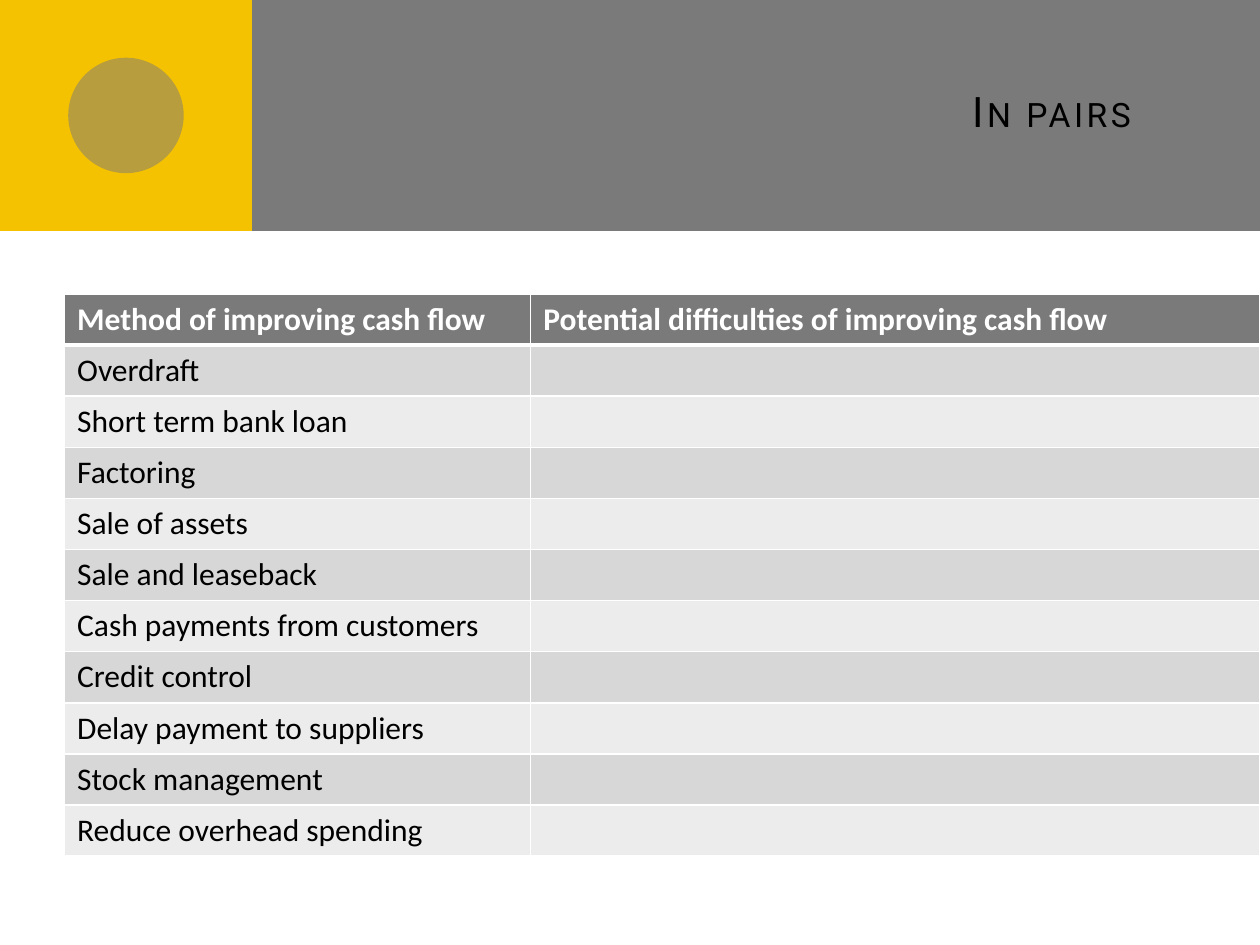
import pptx
import pptx.dml.color
import pptx.enum.shapes
import pptx.enum.text
import pptx.oxml
import pptx.oxml.ns
import pptx.util
from lxml import etree

Pt = pptx.util.Pt
SHAPES = pptx.enum.shapes.MSO_SHAPE
ALIGN = pptx.enum.text.PP_ALIGN
ANCHOR = pptx.enum.text.MSO_ANCHOR

METHODS = [
    "Overdraft", "Short term bank loan", "Factoring", "Sale of assets",
    "Sale and leaseback", "Cash payments from customers", "Credit control",
    "Delay payment to suppliers", "Stock management", "Reduce overhead spending",
]


def color(hex_string):
    return pptx.dml.color.RGBColor.from_string(hex_string)


def add_child(parent, tag, **attributes):
    return etree.SubElement(parent, pptx.oxml.ns.qn(tag), **attributes)


def write_text(frame, text, font="Calibri", size=18, ink="000000", bold=False,
               align=ALIGN.LEFT, spacing=0, small_caps=False):
    paragraph = frame.paragraphs[0]
    paragraph.alignment = align
    run = paragraph.add_run()
    run.text = text
    run.font.name = font
    run.font.size = Pt(size)
    run.font.bold = bold
    run.font.color.rgb = color(ink)
    properties = run.font._element
    if spacing:
        properties.set("spc", str(spacing * 100))
    if small_caps:
        properties.set("cap", "small")


class SlideBuilder:
    gray, yellow, white = "7A7A7A", "F5C201", "FFFFFF"
    bands = ("D7D7D7", "ECECEC")

    def __init__(self, slide):
        self.slide = slide

    def shape(self, kind, left, top, width, height, fill, opacity=100):
        shape = self.slide.shapes.add_shape(
            kind, Pt(left), Pt(top), Pt(width), Pt(height))
        shape.shadow.inherit = False
        shape.fill.solid()
        shape.fill.fore_color.rgb = color(fill)
        shape.line.fill.background()
        if opacity < 100:
            solid = shape._element.spPr.find(pptx.oxml.ns.qn("a:solidFill"))
            add_child(solid[0], "a:alpha", val=str(opacity * 1000))

    def title(self, text, left, top, width, height):
        frame = self.slide.shapes.add_textbox(
            Pt(left), Pt(top), Pt(width), Pt(height)).text_frame
        frame.word_wrap = True
        frame.vertical_anchor = ANCHOR.MIDDLE
        frame.margin_right = Pt(21.6)
        write_text(frame, text, font="Roboto", size=24, align=ALIGN.RIGHT,
                   spacing=2, small_caps=True)

    def cell(self, cell, text, fill, top_border=1, bottom_border=1, **text_format):
        if text:
            write_text(cell.text_frame, text, **text_format)
        properties = cell._tc.get_or_add_tcPr()
        borders = {"a:lnL": 1, "a:lnR": 1, "a:lnT": top_border, "a:lnB": bottom_border}
        for tag, width in borders.items():
            line = add_child(properties, tag, w=str(Pt(width)))
            add_child(add_child(line, "a:solidFill"), "a:srgbClr", val=self.white)
        cell.fill.solid()
        cell.fill.fore_color.rgb = color(fill)

    def table(self, rows, left, top, column_widths, row_height):
        table = self.slide.shapes.add_table(
            len(rows), len(column_widths), Pt(left), Pt(top),
            Pt(sum(column_widths)), Pt(row_height * len(rows))).table
        for column, width in zip(table.columns, column_widths):
            column.width = Pt(width)
        for row_index, texts in enumerate(rows):
            table.rows[row_index].height = Pt(row_height)
            for column_index, text in enumerate(texts):
                cell = table.cell(row_index, column_index)
                if row_index == 0:
                    self.cell(cell, text, self.gray, bottom_border=3,
                              ink=self.white, bold=True)
                else:
                    self.cell(cell, text, self.bands[(row_index - 1) % 2],
                              top_border=3 if row_index == 1 else 1)


def main():
    presentation = pptx.Presentation()
    presentation.slide_width = Pt(720)
    presentation.slide_height = Pt(540)
    builder = SlideBuilder(presentation.slides.add_slide(presentation.slide_layouts[6]))

    # Header band with its accent block and circle
    builder.shape(SHAPES.RECTANGLE, 0, 0, 720, 132, builder.gray)
    builder.shape(SHAPES.RECTANGLE, 0, 0, 144, 132, builder.yellow)
    builder.shape(SHAPES.OVAL, 39, 33, 66, 66, builder.gray, opacity=50)
    builder.title("In pairs", 192, 18, 492, 90)

    # Table of methods, with difficulties left to fill in
    header = ("Method of improving cash flow",
              "Potential difficulties of improving cash flow")
    rows = [header] + [(method, "") for method in METHODS]
    builder.table(rows, 36.9, 168, (266.4, 416.7), 29.2)

    presentation.save("out.pptx")


if __name__ == "__main__":
    main()
